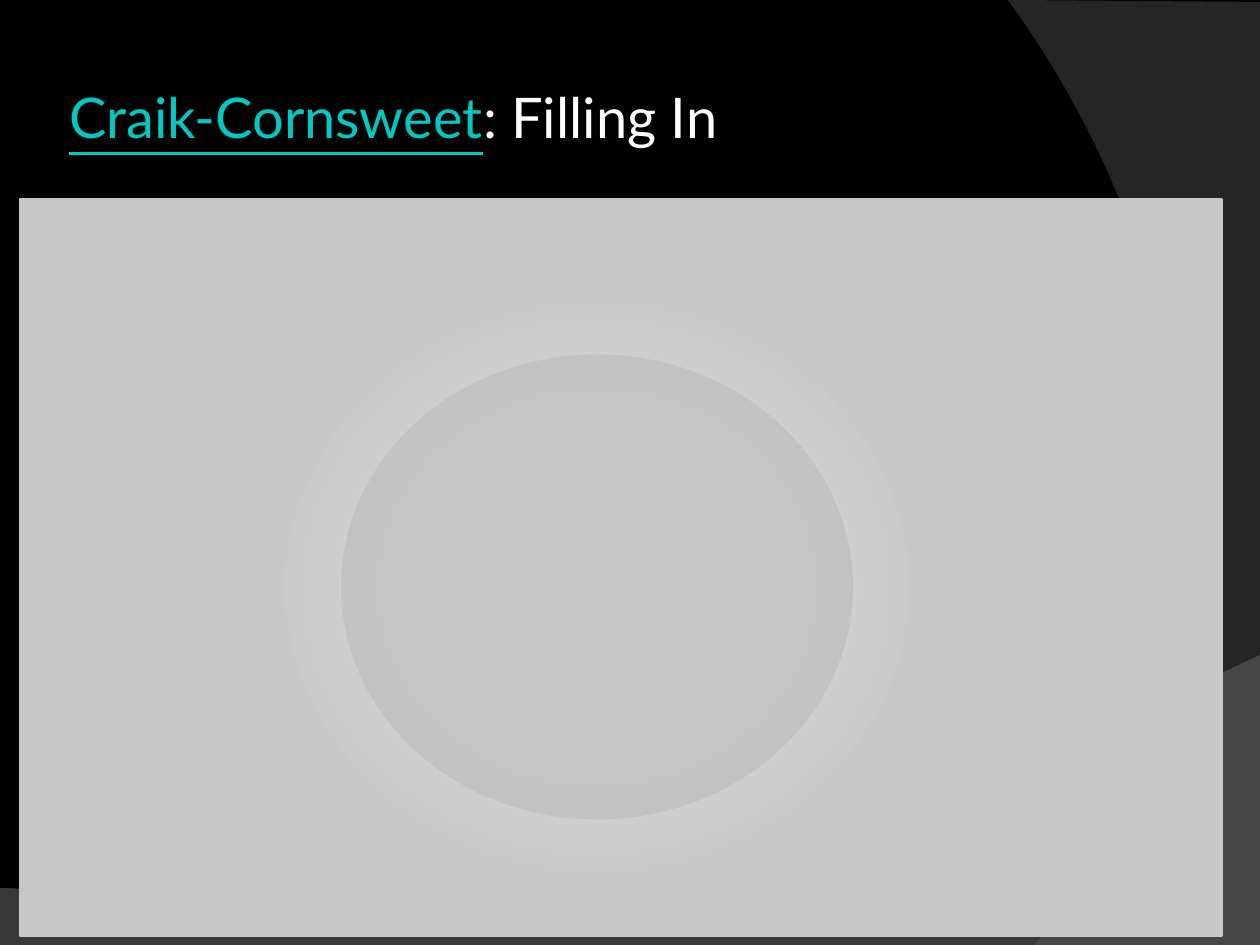
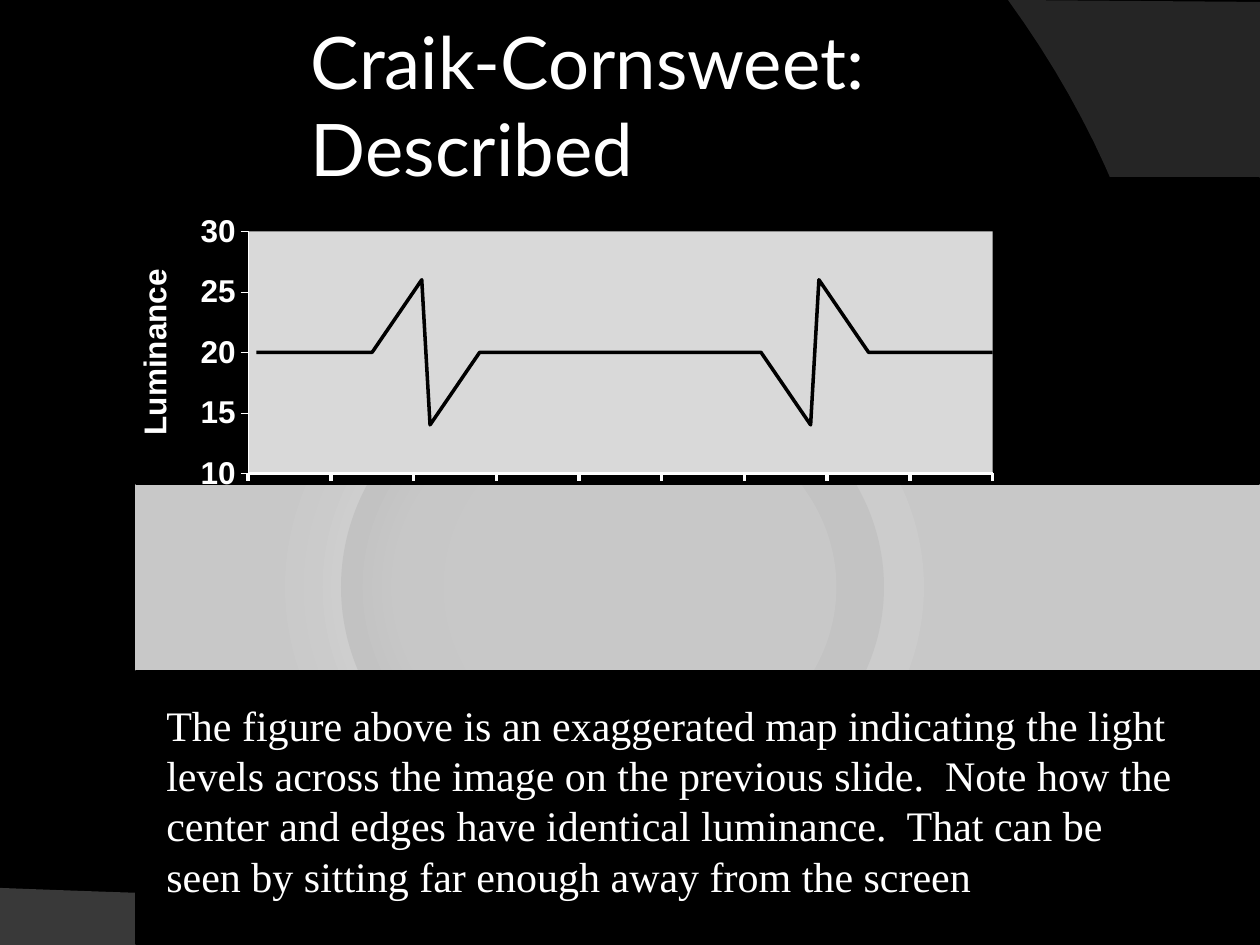
from lxml import etree
from pptx import Presentation
from pptx.chart.data import XyChartData
from pptx.dml.color import RGBColor
from pptx.enum.chart import XL_CHART_TYPE as Chart, XL_TICK_LABEL_POSITION as Labels
from pptx.enum.chart import XL_TICK_MARK as Tick
from pptx.enum.shapes import MSO_SHAPE as Preset
from pptx.enum.text import MSO_ANCHOR as Anchor, MSO_AUTO_SIZE as AutoSize, PP_ALIGN as Align
from pptx.oxml import parse_xml
from pptx.oxml.ns import nsdecls, qn
from pptx.util import Emu, Pt

# Content: lengths in px, boxes as left, top, width, height
PX_PER_INCH = 126
SLIDE_SIZE = 1260, 945
WHITE, BLACK, GREY, LINK = "FFFFFF", "000000", "C8C8C8", "00C8C3"

# Each band: colour, opacity in percent, points before the curve, curve controls and end
BANDS = [
    ("7F7F7F", 45, [(0, 888), (0, 946), (1260, 946), (1260, 655)],
     [(704, 919), (493, 906), (0, 888)]),
    ("5E5E5E", 40, [(1260, 2), (1260, 945), (1034, 945)],
     [(1178, 780), (1283, 378), (1008, 0)]),
]

FILLING_IN = {
    "title": [("Craik-Cornsweet", {"color": LINK, "underline": True}),
              (": Filling In", {"color": WHITE})],
    "title_box": (63, 38, 922, 157), "title_size": 32,
    "field": (20, 199, 1202, 737),
}
DESCRIBED = {
    "title": [("Craik-Cornsweet: Described", {"color": WHITE})],
    "title_box": (305, 20, 840, 169), "title_size": 41.4,
    "field": (136, 190, 1124, 737),
}
MASKS = [(136, 178, 1123, 306), (136, 671, 1124, 273)]
NOTE_BOX = 154, 693, 1043, 214
NOTE = ("The figure above is an exaggerated map indicating the light levels across "
        "the image on the previous slide.  Note how the center and edges have identical "
        "luminance.  That can be seen by sitting far enough away from the screen")

RING_CENTRE = 597, 587
RINGS = [
    (624, 566, "CACACA"), (587, 533, "CBCBCB"), (568, 515, "CCCCCC"),
    (549, 499, "CDCDCD"), (532, 481, "CECECE"), (512, 465, "C2C2C2"),
    (488, 442, "C3C3C3"), (469, 425, "C4C4C4"), (450, 408, "C5C5C5"),
    (431, 391, "C6C6C6"), (412, 374, "C7C7C7"), (393, 358, "C8C8C8"),
]
SHIFTED_RINGS = {"CCCCCC": 43, "C3C3C3": 43, "C8C8C8": 43}

CHART_BOX = 123, 189, 906, 324
PLOT_AREA = {"x": 0.138, "y": 0.131, "w": 0.822, "h": 0.747}
POSITIONS = [1, *range(15, 29), *range(62, 76), 90]
LUMINANCE = [20, *range(20, 27), *range(14, 21),
             *range(20, 13, -1), *range(26, 19, -1), 20]


def px(*lengths):
    return [Emu(round(length * 914400 / PX_PER_INCH)) for length in lengths]


def rgb(value):
    return RGBColor.from_string(value)


def apply(target, **values):
    for name, value in values.items():
        setattr(target, name, value)


def set_font(font, color, **values):
    apply(font, **values)
    font.fill.solid()
    font.fill.fore_color.rgb = rgb(color)


def paint(shape, fill, outlined=False):
    shape.shadow.inherit = False
    shape.fill.solid()
    shape.fill.fore_color.rgb = rgb(fill)
    if outlined:
        draw_line(shape.line, fill, 1)
    else:
        shape.line.fill.background()


def draw_line(line, color, points):
    line.color.rgb = rgb(color)
    line.width = Pt(points)


def add_block(page, box, fill):
    paint(page.shapes.add_shape(Preset.RECTANGLE, *px(*box)), fill, outlined=True)


def bezier(start, first, second, end, steps=48):
    """Return points along a cubic curve, without its start."""
    points = []
    for step in range(1, steps + 1):
        t = step / steps
        weights = (1 - t) ** 3, 3 * t * (1 - t) ** 2, 3 * t * t * (1 - t), t ** 3
        points.append(tuple(sum(w * p for w, p in zip(weights, axis))
                            for axis in zip(start, first, second, end)))
    return points


def add_bands(deck, page):
    """Draw the bands, then move them to the master behind its placeholders."""
    tree = deck.slide_master.shapes.element
    for index, (color, opacity, corners, curve) in enumerate(BANDS):
        points = [px(*point) for point in corners + bezier(corners[-1], *curve)]
        builder = page.shapes.build_freeform(*points[0])
        builder.add_line_segments(points[1:], close=True)
        band = builder.convert_to_shape()
        paint(band, color)
        shade = band.element.spPr.find(qn("a:solidFill"))[0]
        etree.SubElement(shade, qn("a:alpha"), val=str(opacity * 1000))
        tree.insert(2 + index, band.element)


def add_page(deck, content):
    page = deck.slides.add_slide(deck.slide_layouts.get_by_name("Title Only"))
    title = page.shapes.title
    apply(title, **dict(zip(("left", "top", "width", "height"), px(*content["title_box"]))))
    inset = px(6)[0]
    apply(title.text_frame, auto_size=AutoSize.NONE, word_wrap=True,
          vertical_anchor=Anchor.MIDDLE, margin_left=inset, margin_right=inset,
          margin_top=inset, margin_bottom=inset)
    para = title.text_frame.paragraphs[0]
    para.alignment = Align.LEFT
    for text, look in content["title"]:
        span = para.add_run()
        span.text = text
        set_font(span.font, name="Lato", size=Pt(content["title_size"]), **look)
    add_block(page, content["field"], GREY)
    return page


def add_rings(shapes, shifts):
    centre_x, centre_y = RING_CENTRE
    for width, height, color in RINGS:
        left = centre_x - width / 2 + shifts.get(color, 0)
        box = px(left, centre_y - height / 2, width, height)
        paint(shapes.add_shape(Preset.OVAL, *box), color)


def add_luminance_chart(page):
    data = XyChartData()
    series = data.add_series("Series 1")
    for point in zip(POSITIONS, LUMINANCE):
        series.add_data_point(*point)
    frame = page.shapes.add_chart(Chart.XY_SCATTER_LINES_NO_MARKERS, *px(*CHART_BOX), data)
    chart = frame.chart
    apply(chart, has_legend=False, has_title=False)
    bold_white = {"name": "Arial", "size": Pt(18), "bold": True, "color": WHITE}
    set_font(chart.font, **bold_white)

    axes = [
        (chart.category_axis, 2, {"minimum_scale": 0, "maximum_scale": 90,
                                  "major_unit": 10, "tick_label_position": Labels.NONE}),
        (chart.value_axis, 0.25, {"minimum_scale": 10, "maximum_scale": 30,
                                  "major_unit": 5}),
    ]
    for axis, points, look in axes:
        apply(axis, has_major_gridlines=False, major_tick_mark=Tick.OUTSIDE,
              minor_tick_mark=Tick.NONE, **look)
        draw_line(axis.format.line, WHITE, points)
    para = chart.value_axis.axis_title.text_frame.paragraphs[0]
    span = para.add_run()
    span.text = "Luminance"
    set_font(span.font, **bold_white)

    curve = chart.plots[0].series[0]
    curve.smooth = False
    draw_line(curve.format.line, BLACK, 2)
    style_plot_area(chart)


def style_plot_area(chart):
    area = chart.element.chart.plotArea
    for old in area.findall(qn("c:layout")):
        area.remove(old)
    modes = '<c:layoutTarget val="inner"/><c:xMode val="edge"/><c:yMode val="edge"/>'
    sizes = "".join(f'<c:{name} val="{value}"/>' for name, value in PLOT_AREA.items())
    area.insert(0, parse_xml(f'<c:layout {nsdecls("c")}><c:manualLayout>{modes}{sizes}'
                             '</c:manualLayout></c:layout>'))
    area.append(parse_xml(f'<c:spPr {nsdecls("c", "a")}><a:solidFill>'
                          '<a:srgbClr val="D9D9D9"/></a:solidFill></c:spPr>'))


def add_note(page):
    frame = page.shapes.add_textbox(*px(*NOTE_BOX)).text_frame
    apply(frame, word_wrap=True, auto_size=AutoSize.SHAPE_TO_FIT_TEXT)
    span = frame.paragraphs[0].add_run()
    span.text = NOTE
    set_font(span.font, WHITE, name="Times New Roman", size=Pt(24))


def main():
    deck = Presentation()
    deck.slide_width, deck.slide_height = px(*SLIDE_SIZE)
    backdrop = deck.slide_master.background.fill
    backdrop.solid()
    backdrop.fore_color.rgb = rgb(BLACK)

    page = add_page(deck, FILLING_IN)
    add_bands(deck, page)
    add_rings(page.shapes.add_group_shape().shapes, {})

    page = add_page(deck, DESCRIBED)
    add_rings(page.shapes, SHIFTED_RINGS)
    for box in MASKS:
        add_block(page, box, BLACK)
    add_luminance_chart(page)
    add_note(page)
    deck.save("out.pptx")


if __name__ == "__main__":
    main()
